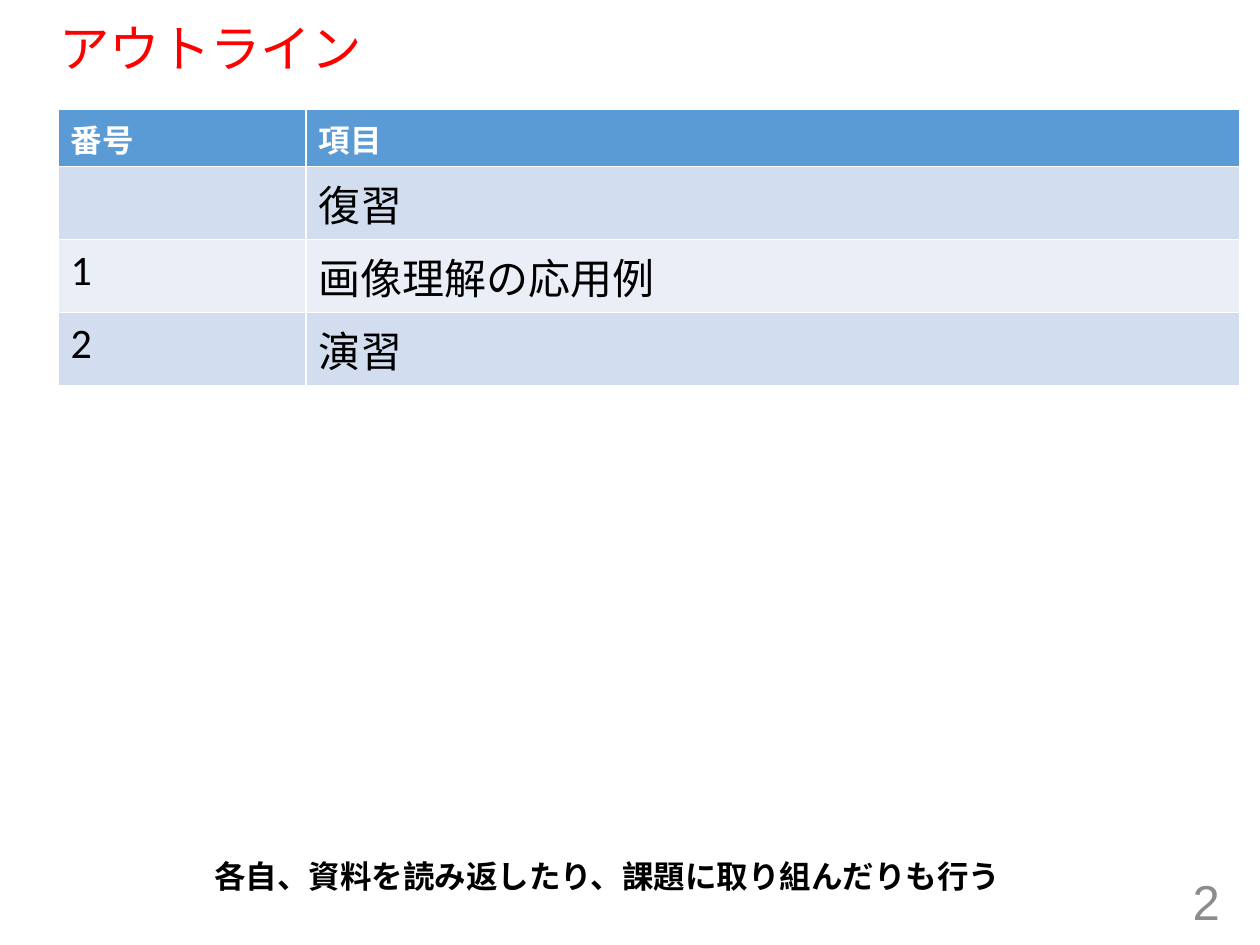
from pptx import Presentation
from pptx.dml.color import RGBColor
from pptx.enum.text import MSO_ANCHOR, MSO_AUTO_SIZE, PP_ALIGN
from pptx.util import Inches, Pt

MIDDLE = MSO_ANCHOR.MIDDLE
FIXED = MSO_AUTO_SIZE.NONE
LEFT, RIGHT = PP_ALIGN.LEFT, PP_ALIGN.RIGHT
HUES = {
    "title": "FF0000",
    "number": "8C8C8C",
    "ink": "000000",
    "white": "FFFFFF",
    "head": "5B9BD5",
    "odd": "D2DEEF",
    "even": "EAEFF7",
}


def style(frame, size, face, hue, bold=False):
    for para in frame.paragraphs:
        for font in [para.font] + [run.font for run in para.runs]:
            font.size = Pt(size)
            font.name = face
            font.bold = bold
            font.color.rgb = RGBColor.from_string(HUES[hue])


def place(shape, left, top, width, height):
    shape.left, shape.top = Inches(left), Inches(top)
    shape.width, shape.height = Inches(width), Inches(height)


deck = Presentation()
deck.slide_width, deck.slide_height = Inches(10), Inches(7.5)
slide = deck.slides.add_slide(deck.slide_layouts[5])

title = slide.shapes.title
place(title, 0.37, 0.15, 9.25, 0.51)
frame = title.text_frame
frame.text = "アウトライン"
frame.auto_size = FIXED
frame.vertical_anchor = MIDDLE
frame.paragraphs[0].alignment = LEFT
frame.paragraphs[0].line_spacing = 0.9
style(frame, 28.8, "Arial", "title")

number = slide.shapes.add_textbox(0, 0, 0, 0)
place(number, 7.53, 6.95, 2.25, 0.4)
frame = number.text_frame
frame.text = "2"
frame.word_wrap = True
frame.vertical_anchor = MIDDLE
frame.paragraphs[0].alignment = RIGHT
style(frame, 28, "Arial", "number")

rows = [("番号", "項目"), ("", "復習"), ("1", "画像理解の応用例"), ("2", "演習")]
widths = [1.97, 7.41]
heights = [0.45] + [0.58] * 3
table = slide.shapes.add_table(
    len(rows), len(widths), Inches(0.46), Inches(0.87),
    Inches(sum(widths)), Inches(sum(heights)),
).table
for col, width in zip(table.columns, widths):
    col.width = Inches(width)
for i, words in enumerate(rows):
    table.rows[i].height = Inches(heights[i])
    band = "head" if i == 0 else "odd" if i % 2 else "even"
    for j, word in enumerate(words):
        cell = table.cell(i, j)
        cell.fill.solid()
        cell.fill.fore_color.rgb = RGBColor.from_string(HUES[band])
        cell.text_frame.text = word
        if i == 0:
            style(cell.text_frame, 18, "Calibri", "white", True)
        else:
            style(cell.text_frame, 24, "Calibri", "ink")

note = slide.shapes.add_textbox(0, 0, 0, 0)
place(note, 1.6, 6.75, 6.51, 0.4)
frame = note.text_frame
frame.text = "各自、資料を読み返したり、課題に取り組んだりも行う"
frame.word_wrap = False
style(frame, 18, "Calibri", "ink", True)

deck.save("out.pptx")
